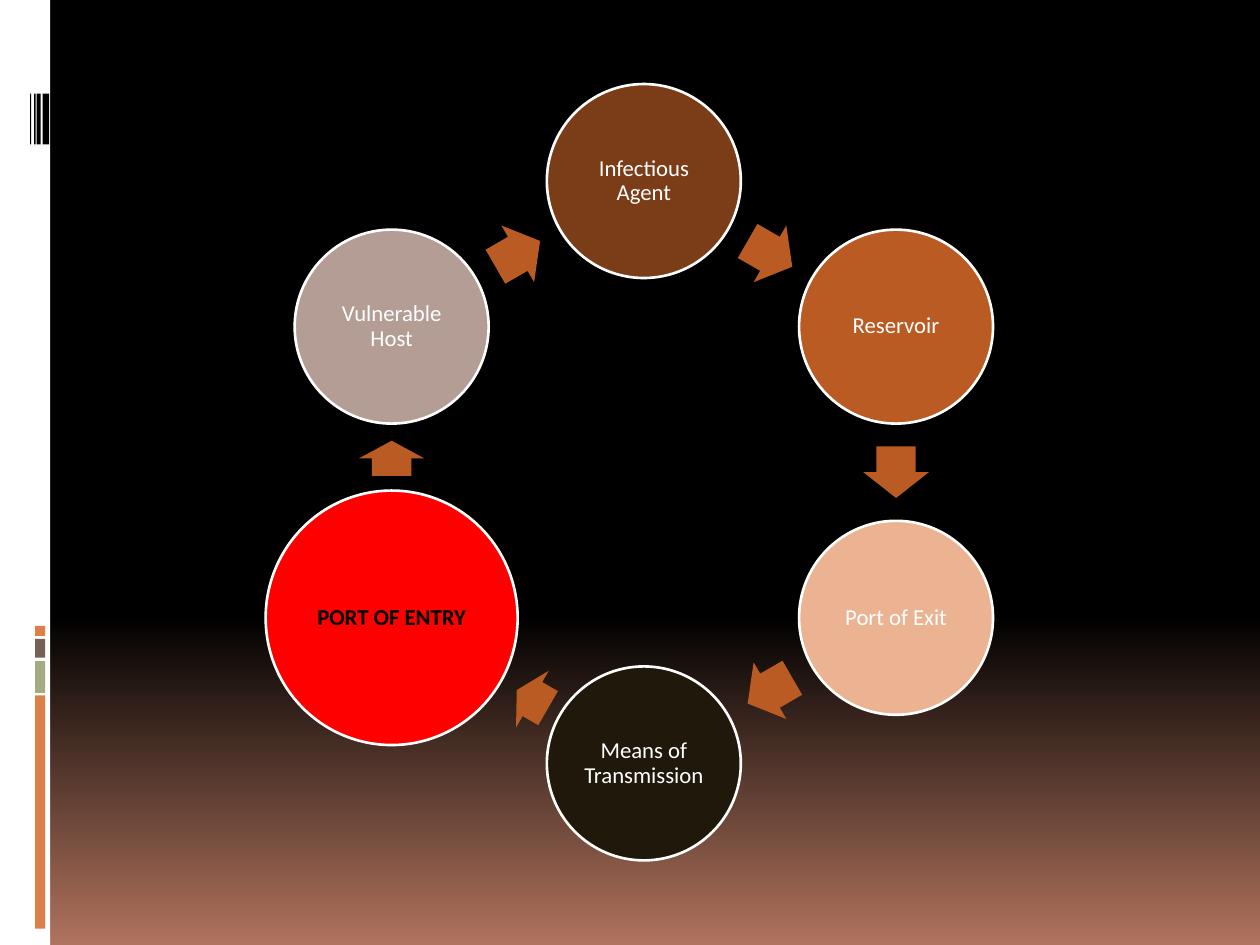
from math import cos, radians, sin

from pptx import Presentation
from pptx.dml.color import RGBColor
from pptx.enum.shapes import MSO_SHAPE
from pptx.enum.text import MSO_ANCHOR, PP_ALIGN
from pptx.util import Cm, Pt

COLORS = {
    "black": "000000",
    "white": "FFFFFF",
    "clay": "B0735D",
    "orange": "DD8047",
    "sage": "A5AB81",
    "umber": "775F55",
    "brown": "7B3D17",
    "rust": "B95B22",
    "peach": "EBB391",
    "dark": "20190B",
    "red": "FF0000",
    "taupe": "B39D94",
}

CENTER_X, CENTER_Y = 12.98, 9.52
RING_RADIUS = 5.87
ARROW_RADIUS = RING_RADIUS * cos(radians(30))
CIRCLE_SIZE = (3.91, 3.91)
ENTRY_SIZE = (5.08, 5.13)

STAGES = [
    ("Infectious Agent", "brown", "white", CIRCLE_SIZE, 1.04, 0),
    ("Reservoir", "rust", "white", CIRCLE_SIZE, 1.04, 0),
    ("Port of Exit", "peach", "white", CIRCLE_SIZE, 1.04, 0),
    ("Means of Transmission", "dark", "white", CIRCLE_SIZE, 0.73, -0.34),
    ("PORT OF ENTRY", "red", "black", ENTRY_SIZE, 0.71, 0.28),
    ("Vulnerable Host", "taupe", "white", CIRCLE_SIZE, 1.04, 0),
]

SIDE_BARS = [
    (12.62, 0.2, "orange"),
    (12.88, 0.38, "umber"),
    (13.33, 0.64, "sage"),
    (14.02, 4.7, "orange"),
]
STRIPES = [(0.61, 0.02), (0.69, 0.03), (0.74, 0.08), (0.86, 0.13)]


class SlideBuilder:
    font_name = "Calibri"
    font_size = Pt(13)

    def __init__(self, slide):
        self.slide = slide

    def color(self, name):
        return RGBColor.from_string(COLORS[name])

    def background(self, top, bottom):
        fill = self.slide.background.fill
        fill.gradient()
        fill.gradient_angle = 270
        for stop, name, position in zip(fill.gradient_stops, (top, bottom), (0.65, 1)):
            stop.color.rgb = self.color(name)
            stop.position = position

    def shape(self, kind, left, top, width, height, fill):
        shape = self.slide.shapes.add_shape(
            kind, Cm(left), Cm(top), Cm(width), Cm(height)
        )
        shape.shadow.inherit = False
        shape.fill.solid()
        shape.fill.fore_color.rgb = self.color(fill)
        shape.line.fill.background()
        return shape

    def bar(self, left, top, width, height, fill):
        return self.shape(MSO_SHAPE.RECTANGLE, left, top, width, height, fill)

    def circle(self, x, y, size, fill, text, text_color, bold):
        width, height = size
        shape = self.shape(
            MSO_SHAPE.OVAL, x - width / 2, y - height / 2, width, height, fill
        )
        shape.line.color.rgb = self.color("white")
        shape.line.width = Pt(1.5)
        frame = shape.text_frame
        frame.word_wrap = True
        frame.vertical_anchor = MSO_ANCHOR.MIDDLE
        frame.margin_left = frame.margin_right = Cm(0.05)
        frame.margin_top = frame.margin_bottom = Cm(0.05)
        paragraph = frame.paragraphs[0]
        paragraph.alignment = PP_ALIGN.CENTER
        paragraph.line_spacing = 0.9
        run = paragraph.add_run()
        run.text = text
        run.font.name = self.font_name
        run.font.size = self.font_size
        run.font.bold = bold
        run.font.color.rgb = self.color(text_color)

    def arrow(self, x, y, length, rotation):
        breadth = 1.32
        shape = self.shape(
            MSO_SHAPE.RIGHT_ARROW,
            x - length / 2, y - breadth / 2, length, breadth, "rust",
        )
        shape.adjustments[0] = 0.6
        shape.adjustments[1] = 0.5
        shape.rotation = rotation


def main():
    presentation = Presentation()
    presentation.slide_width = Cm(25.4)
    presentation.slide_height = Cm(19.05)
    builder = SlideBuilder(
        presentation.slides.add_slide(presentation.slide_layouts[6])
    )
    builder.background("black", "clay")

    builder.bar(0, 0, 1.01, 19.05, "white")
    for top, height, fill in SIDE_BARS:
        builder.bar(0.71, top, 0.2, height, fill)
    for left, width in STRIPES:
        builder.bar(left, 1.89, width, 1.02, "black")

    for index, (text, fill, text_color, size, length, shift) in enumerate(STAGES):
        angle = radians(60 * index - 90)
        builder.circle(
            CENTER_X + RING_RADIUS * cos(angle),
            CENTER_Y + RING_RADIUS * sin(angle),
            size, fill, text, text_color, size == ENTRY_SIZE,
        )
        rotation = 60 * index + 30
        heading = radians(rotation)
        middle = radians(rotation - 90)
        builder.arrow(
            CENTER_X + ARROW_RADIUS * cos(middle) + shift * cos(heading),
            CENTER_Y + ARROW_RADIUS * sin(middle) + shift * sin(heading),
            length, rotation,
        )

    presentation.save("out.pptx")


if __name__ == "__main__":
    main()
